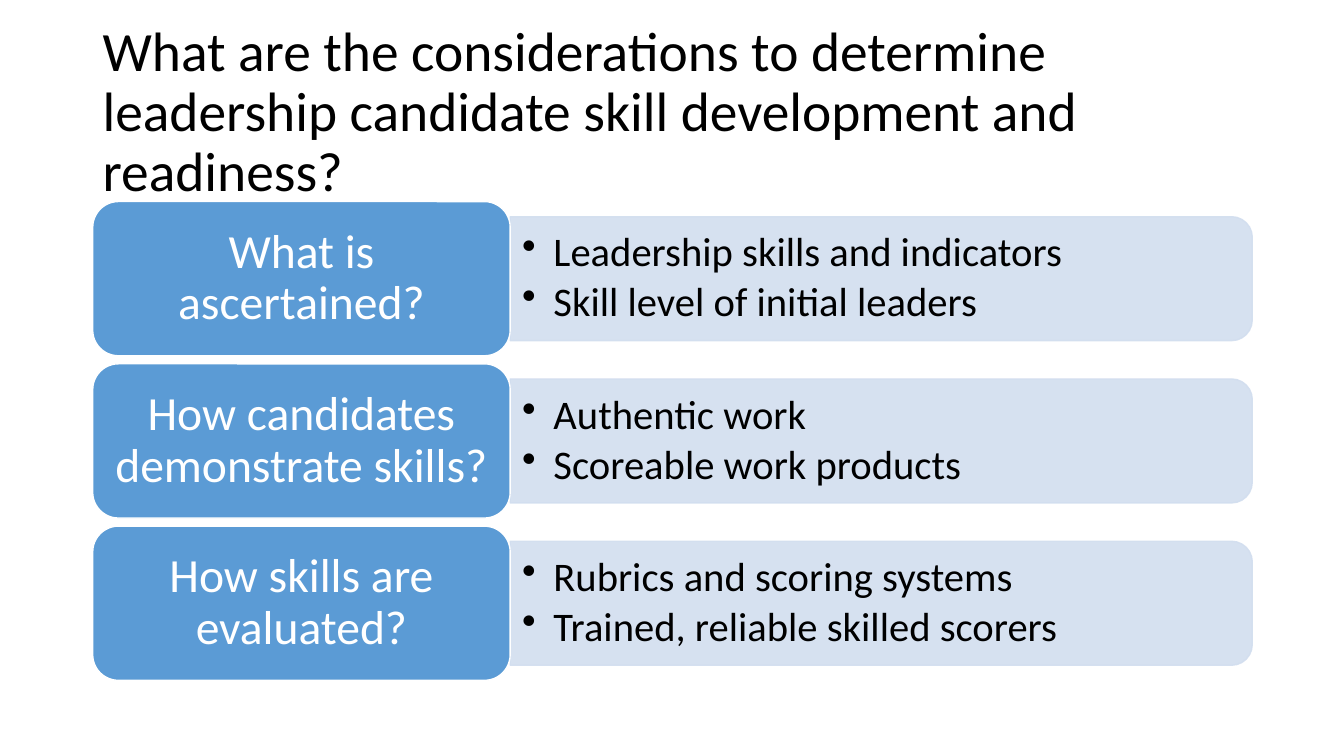
from dataclasses import dataclass

from lxml.etree import SubElement
from pptx import Presentation
from pptx.dml.color import RGBColor
from pptx.enum.shapes import MSO_SHAPE as Shp
from pptx.enum.text import MSO_ANCHOR as Anchor, PP_ALIGN as Align
from pptx.oxml.ns import qn
from pptx.util import Inches, Pt

COLORS = {"text": "000000", "label": "5B9BD5", "panel": "D2DEEF", "white": "FFFFFF"}
FONT = "Calibri"
LEFT, TOP, PITCH = 0.92, 2.0, 1.61
LABEL_W, LABEL_H = 4.14, 1.53
PANEL_W, PANEL_H = 7.36, 1.23
POINTS_W, POINTS_H = 7.3, 1.11


@dataclass(frozen=True)
class Question:
    label: str
    points: tuple[str, ...]


QUESTIONS = (
    Question("What is ascertained?",
             ("Leadership skills and indicators", "Skill level of initial leaders")),
    Question("How candidates demonstrate skills?",
             ("Authentic work", "Scoreable work products")),
    Question("How skills are evaluated?",
             ("Rubrics and scoring systems", "Trained, reliable skilled scorers")),
)


def color(name: str) -> RGBColor:
    return RGBColor.from_string(COLORS[name])


def set_text(sp, lines: tuple[str, ...], size: float, ink: str, inset: tuple[float, float],
             align=Align.LEFT, after: float = 0, bullets: bool = False) -> None:
    tf = sp.text_frame
    tf.word_wrap = True
    tf.vertical_anchor = Anchor.MIDDLE
    tf.margin_left = tf.margin_right = Inches(inset[0])
    tf.margin_top = tf.margin_bottom = Inches(inset[1])
    for i, line in enumerate(lines):
        p = tf.add_paragraph() if i else tf.paragraphs[0]
        p.text = line
        p.alignment = align
        p.line_spacing = 0.9
        p.space_after = Pt(after)
        p.font.name = FONT
        p.font.size = Pt(size)
        p.font.color.rgb = color(ink)
        if bullets:
            p.level = 1
            pPr = p._p.get_or_add_pPr()
            pPr.set("marL", str(Inches(0.31)))
            pPr.set("indent", str(-Inches(0.31)))
            bullet = pPr.makeelement(qn("a:buChar"), {"char": "•"})
            pPr.find(qn("a:defRPr")).addprevious(bullet)


def add_block(slide, kind, x: float, y: float, w: float, h: float, fill: str, line: str):
    sp = slide.shapes.add_shape(kind, Inches(x), Inches(y), Inches(w), Inches(h))
    sp.shadow.inherit = False
    sp.fill.solid()
    sp.fill.fore_color.rgb = color(fill)
    sp.line.color.rgb = color(line)
    sp.line.width = Pt(1)
    return sp


def add_textbox(slide, x: float, y: float, w: float, h: float):
    return slide.shapes.add_textbox(Inches(x), Inches(y), Inches(w), Inches(h))


def add_question(slide, question: Question, top: float) -> None:
    middle = top + LABEL_H / 2
    split = LEFT + LABEL_W
    panel = add_block(slide, Shp.ROUND_2_SAME_RECTANGLE,
                      split + (PANEL_W - PANEL_H) / 2, middle - PANEL_W / 2,
                      PANEL_H, PANEL_W, "panel", "panel")
    panel.rotation = 90
    for clr in panel._element.spPr.iter(qn("a:srgbClr")):
        SubElement(clr, qn("a:alpha"), val="90000")

    points = add_textbox(slide, split, middle - POINTS_H / 2, POINTS_W, POINTS_H)
    set_text(points, question.points, 29, "text", (0.12, 0.06), after=4.35, bullets=True)

    label = add_block(slide, Shp.ROUNDED_RECTANGLE, LEFT, top, LABEL_W, LABEL_H,
                      "label", "white")
    set_text(label, (question.label,), 34, "white", (0.14, 0.07), Align.CENTER)


def main() -> None:
    prs = Presentation()
    prs.slide_width, prs.slide_height = Inches(13.33), Inches(7.5)
    slide = prs.slides.add_slide(prs.slide_layouts[6])

    title = add_textbox(slide, LEFT, 0.4, 11.5, 1.45)
    set_text(title, ("What are the considerations to determine leadership candidate "
                     "skill development and readiness?",), 39.6, "text", (0.1, 0.05))

    for i, question in enumerate(QUESTIONS):
        add_question(slide, question, TOP + i * PITCH)

    prs.save("out.pptx")


if __name__ == "__main__":
    main()
